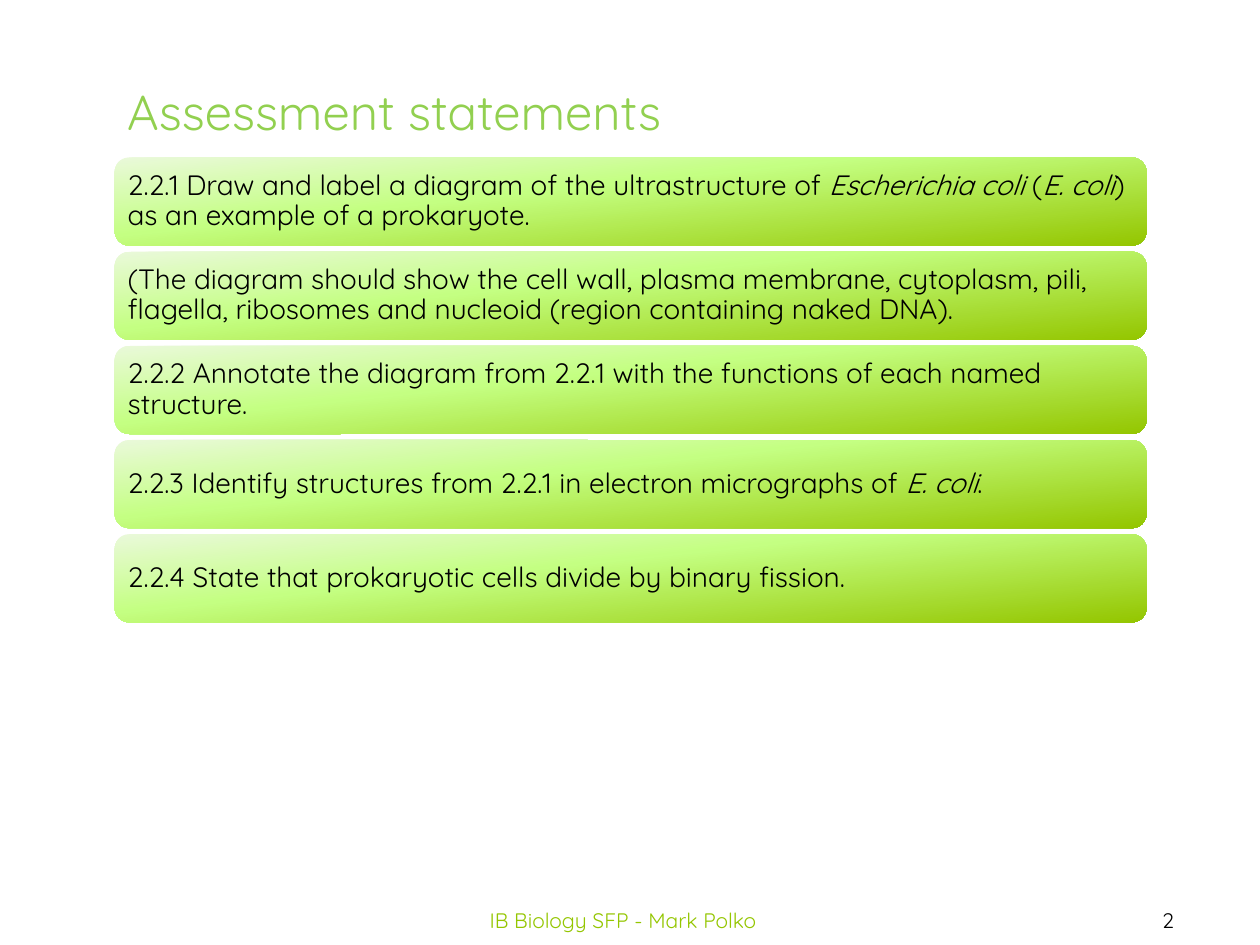
from copy import deepcopy
from dataclasses import dataclass

from pptx import Presentation
from pptx import util as u
from pptx.dml.color import RGBColor
from pptx.enum import shapes, text

Inches = u.Inches


@dataclass(frozen=True)
class Theme:
    font: str = "Quicksand"
    title: str = "92D050"
    body: str = "000000"
    footer: str = "94C600"
    gradient: tuple = ((0, "EAF9DA"), (0.4, "C4FF82"), (1, "94C600"))
    gradient_angle: int = 276
    title_size: int = 28
    body_size: int = 16
    footer_size: int = 12


THEME = Theme()

# Each statement is a list of (wording, italic) pieces.
STATEMENTS = [
    [("2.2.1 Draw and label a diagram of the ultrastructure of ", False),
     ("Escherichia coli ", True), ("(", False), ("E. coli", True),
     (") as an example of a prokaryote.", False)],
    [("(The diagram should show the cell wall, plasma membrane, cytoplasm, pili, "
      "flagella, ribosomes and nucleoid (region containing naked DNA).", False)],
    [("2.2.2 Annotate the diagram from 2.2.1 with the functions of each named "
      "structure.", False)],
    [("2.2.3 Identify structures from 2.2.1 in electron micrographs of ", False),
     ("E. coli", True), (".", False)],
    [("2.2.4 State that prokaryotic cells divide by binary fission.", False)],
]


def style(span, size, color, italic=None):
    span.font.name = THEME.font
    span.font.size = u.Pt(size)
    span.font.color.rgb = RGBColor.from_string(color)
    span.font.italic = italic


def fill_gradient(fill):
    """Blend the theme's three colours across a shape."""
    fill.gradient()
    fill.gradient_angle = THEME.gradient_angle
    stop_list = fill._fill._gradFill.gsLst
    stop_list.append(deepcopy(stop_list[-1]))
    for stop, (position, color) in zip(fill.gradient_stops, THEME.gradient):
        stop.position = position
        stop.color.rgb = RGBColor.from_string(color)


def add_title(page, wording, left, top, width, height):
    title = page.shapes.title
    title.left, title.top, title.width, title.height = left, top, width, height
    frame = title.text_frame
    frame.text = wording
    frame.word_wrap = False
    frame.auto_size = text.MSO_AUTO_SIZE.NONE
    frame.vertical_anchor = text.MSO_ANCHOR.TOP
    para = frame.paragraphs[0]
    para.alignment = text.PP_ALIGN.LEFT
    style(para.runs[0], THEME.title_size, THEME.title)


def add_statement(page, pieces, left, top, width, height):
    bar = page.shapes.add_shape(
        shapes.MSO_SHAPE.ROUNDED_RECTANGLE, left, top, width, height)
    bar.shadow.inherit = False
    bar.line.fill.background()
    fill_gradient(bar.fill)
    frame = bar.text_frame
    frame.word_wrap = True
    frame.vertical_anchor = text.MSO_ANCHOR.MIDDLE
    frame.margin_left = frame.margin_right = Inches(0.07)
    frame.margin_top = frame.margin_bottom = Inches(0.07)
    para = frame.paragraphs[0]
    para.alignment = text.PP_ALIGN.LEFT
    para.line_spacing = 0.9
    for wording, italic in pieces:
        span = para.add_run()
        span.text = wording
        style(span, THEME.body_size, THEME.body, italic)


def add_statements(page, statements, left, top, width, height):
    """Stack equal bars so that they fill the given box."""
    bar_height = Inches(0.7)
    step = (height - bar_height) / (len(statements) - 1)
    for index, pieces in enumerate(statements):
        add_statement(page, pieces, left, round(top + index * step), width, bar_height)


def add_footer(page, wording, color, left, top, width, height):
    box = page.shapes.add_textbox(left, top, width, height)
    frame = box.text_frame
    frame.text = wording
    frame.word_wrap = True
    frame.vertical_anchor = text.MSO_ANCHOR.MIDDLE
    para = frame.paragraphs[0]
    para.alignment = text.PP_ALIGN.CENTER
    style(para.runs[0], THEME.footer_size, color)


def main():
    deck = Presentation()
    deck.slide_width, deck.slide_height = Inches(10), Inches(7.5)
    page = deck.slides.add_slide(deck.slide_layouts.get_by_name("Title Only"))
    add_title(page, "Assessment statements",
              Inches(0.91), Inches(0.6), Inches(4.59), Inches(0.57))
    add_statements(page, STATEMENTS,
                   Inches(0.91), Inches(1.25), Inches(8.19), Inches(3.69))
    add_footer(page, "IB Biology SFP - Mark Polko", THEME.footer,
               Inches(3.03), Inches(7.1), Inches(3.83), Inches(0.4))
    add_footer(page, "2", THEME.body,
               Inches(8.54), Inches(7.1), Inches(1.46), Inches(0.4))
    deck.save("out.pptx")


if __name__ == "__main__":
    main()
